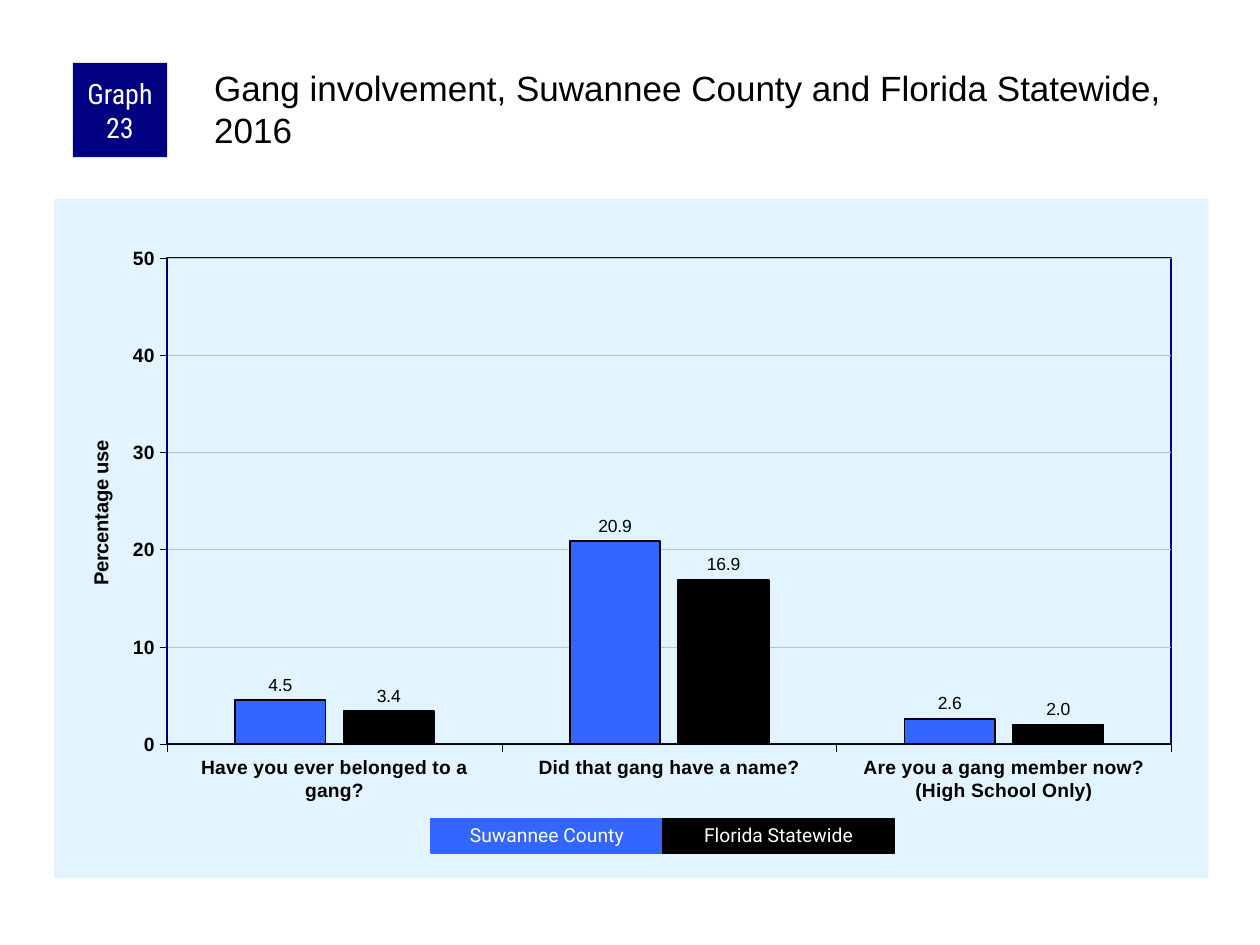
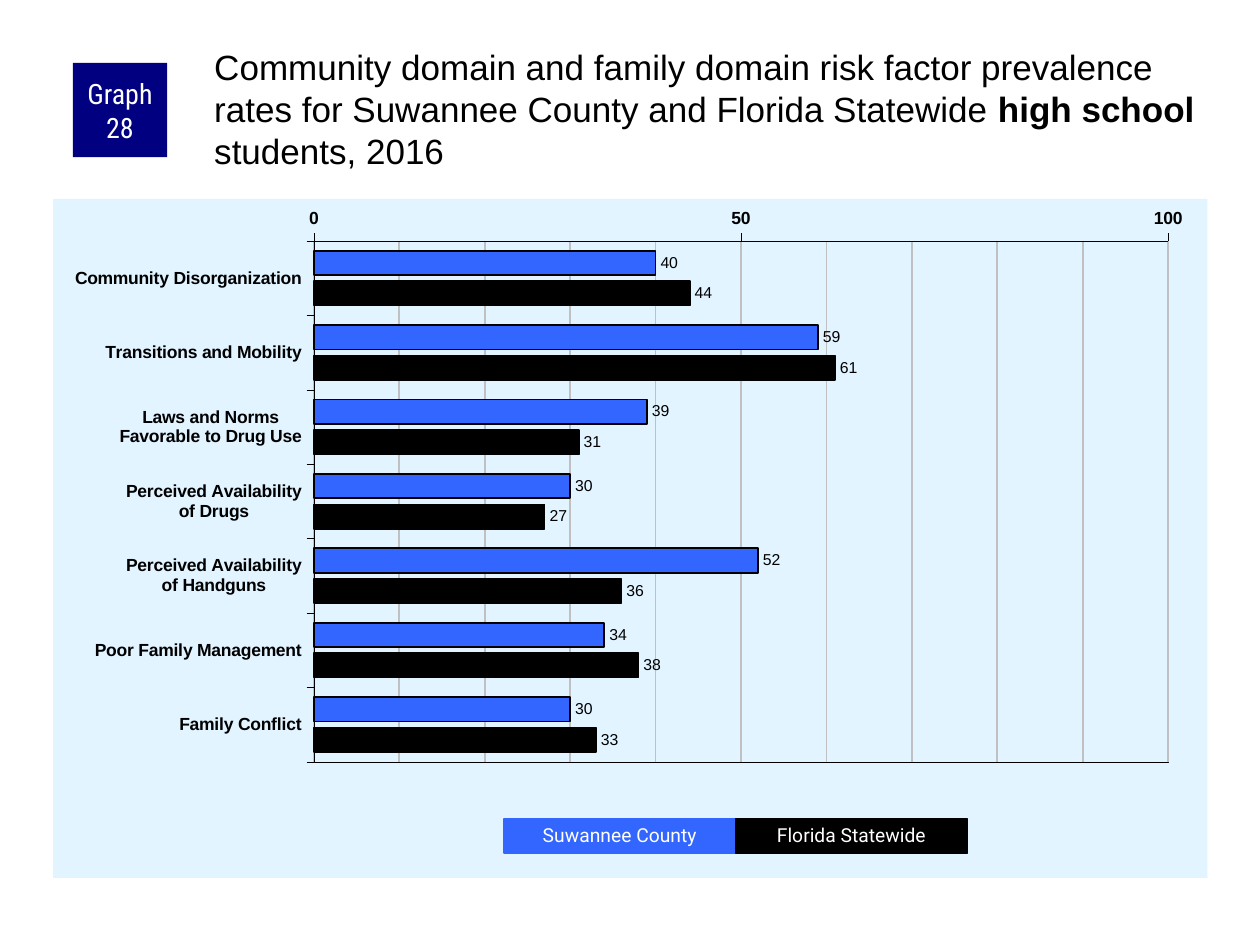
from copy import deepcopy

from lxml import etree
from pptx import Presentation
from pptx.chart.data import CategoryChartData
from pptx.dml.color import RGBColor
from pptx.enum.chart import (XL_AXIS_CROSSES, XL_CHART_TYPE, XL_LABEL_POSITION,
                             XL_TICK_MARK)
from pptx.enum.shapes import MSO_SHAPE
from pptx.enum.text import MSO_ANCHOR, PP_ALIGN
from pptx.oxml import parse_xml
from pptx.oxml.ns import nsdecls, qn
from pptx.util import Cm, Pt

COLUMN = XL_CHART_TYPE.COLUMN_CLUSTERED
BAR = XL_CHART_TYPE.BAR_CLUSTERED
OUTSIDE = XL_TICK_MARK.OUTSIDE
NO_TICK = XL_TICK_MARK.NONE
LABEL_END = XL_LABEL_POSITION.OUTSIDE_END
CROSS_MAXIMUM = XL_AXIS_CROSSES.MAXIMUM
RECTANGLE = MSO_SHAPE.RECTANGLE
MIDDLE = MSO_ANCHOR.MIDDLE
CENTER = PP_ALIGN.CENTER

BLACK, WHITE, NAVY, GREY, PANEL = "000000", "FFFFFF", "000080", "C0C0C0", "E1F4FF"
PLACES = [("Suwannee County", "3366FF"), ("Florida Statewide", BLACK)]

GRAPHS = [
    {
        "number": 23, "title_top": 1.27, "chart_left": 1.09, "legend_left": 8.69,
        "title": [("Gang involvement, Suwannee County and Florida Statewide, 2016", False)],
        "type": COLUMN, "gap": 150, "overlap": -20,
        "plot": (0.098, 0.087, 0.87, 0.716), "border": (NAVY, 12700),
        "categories": ["Have you ever belonged to a gang?", "Did that gang have a name?",
                       "Are you a gang member now?\n(High School Only)"],
        "values": [(4.5, 20.9, 2.6), (3.4, 16.9, 2.0)],
        "maximum": 50, "major": 10, "grid": 0.25, "format": "0.0",
        "size": 11.5, "axis_size": 11, "label_size": 10,
    },
    {
        "number": 28, "title_top": 0.84, "chart_left": 1.07, "legend_left": 10.16,
        "title": [("Community domain and family domain risk factor prevalence rates "
                   "for Suwannee County and Florida Statewide ", False),
                  ("high school", True), (" students, 2016", False)],
        "type": BAR, "gap": 80, "overlap": -25,
        "plot": (0.226, 0.062, 0.74, 0.767), "border": (BLACK, 3175),
        "categories": ["Community Disorganization", "Transitions and Mobility",
                       "Laws and Norms\nFavorable to Drug Use",
                       "Perceived Availability\nof Drugs",
                       "Perceived Availability\nof Handguns",
                       "Poor Family Management", "Family Conflict"],
        "values": [(40, 59, 39, 30, 52, 34, 30), (44, 61, 31, 27, 36, 38, 33)],
        "maximum": 100, "major": 50, "grid": 1, "format": "0",
        "size": 11.8, "axis_size": 10, "label_size": 9,
    },
]


def rgb(color):
    return RGBColor.from_string(color)


def manual_layout(**settings):
    """Return a chart layout element with the given settings, in order."""
    layout = parse_xml(f"<c:layout {nsdecls('c')}><c:manualLayout/></c:layout>")
    for name, value in settings.items():
        etree.SubElement(layout[0], qn(f"c:{name}")).set("val", str(value))
    return layout


presentation = Presentation()
presentation.slide_width, presentation.slide_height = Cm(25.4), Cm(19.05)

for graph in GRAPHS:
    slide = presentation.slides.add_slide(presentation.slide_layouts[6])

    # Chart and its data
    data = CategoryChartData()
    data.categories = graph["categories"]
    for (place, color), values in zip(PLACES, graph["values"]):
        data.add_series(place, values)
    chart = slide.shapes.add_chart(graph["type"], Cm(graph["chart_left"]), Cm(4.01),
                                   Cm(23.27), Cm(13.69), data).chart
    chart.has_title = chart.has_legend = False
    chart.font.name, chart.font.size = "Arial", Pt(graph["size"])
    chart.font.color.rgb = rgb(BLACK)

    # Bars and value labels
    plot = chart.plots[0]
    plot.vary_by_categories = False
    plot.gap_width, plot.overlap = graph["gap"], graph["overlap"]
    for series, (place, color) in zip(plot.series, PLACES):
        series.format.fill.solid()
        series.format.fill.fore_color.rgb = rgb(color)
        series.format.line.color.rgb = rgb(BLACK)
        series.format.line.width = Pt(1)
        labels = series.data_labels
        labels.show_value, labels.position = True, LABEL_END
        labels.number_format, labels.number_format_is_linked = graph["format"], False
        labels.font.name, labels.font.size = "Arial", Pt(graph["label_size"])
        labels.font.color.rgb = rgb(BLACK)

    # Axes and gridlines
    category_axis, value_axis = chart.category_axis, chart.value_axis
    for axis in (category_axis, value_axis):
        axis.major_tick_mark, axis.minor_tick_mark = OUTSIDE, NO_TICK
        axis.format.line.color.rgb = rgb(BLACK)
        axis.format.line.width = Pt(0.25)
        font = axis.tick_labels.font
        font.name, font.size, font.bold = "Arial", Pt(graph["axis_size"]), True
        font.color.rgb = rgb(BLACK)
    value_axis.minimum_scale, value_axis.maximum_scale = 0, graph["maximum"]
    value_axis.major_unit = graph["major"]
    value_axis.tick_labels.number_format = "0"
    value_axis.tick_labels.number_format_is_linked = False
    grid_line = value_axis.major_gridlines.format.line
    grid_line.color.rgb = rgb(GREY)
    grid_line.width = Pt(graph["grid"])
    if graph["type"] == BAR:
        category_axis.reverse_order = True
        category_axis.crosses = CROSS_MAXIMUM
        # Minor gridlines take the style of the major ones
        value_axis.minor_unit = 10
        value_axis.has_minor_gridlines = True
        axis_element = value_axis._element
        major_style = axis_element.find(qn("c:majorGridlines"))[0]
        axis_element.find(qn("c:minorGridlines")).append(deepcopy(major_style))
    else:
        axis_title = value_axis.axis_title
        paragraph = axis_title.text_frame.paragraphs[0]
        paragraph.text = "Percentage use"
        paragraph.font.name, paragraph.font.size = "Arial", Pt(graph["size"])
        paragraph.font.bold = True
        paragraph.font.color.rgb = rgb(BLACK)
        title_element = axis_title._element
        for layout in title_element.findall(qn("c:layout")):
            title_element.remove(layout)
        title_element.find(qn("c:tx")).addnext(
            manual_layout(xMode="edge", yMode="edge", x=0.026, y=0.35))

    # Plot position, plot border and chart background
    chart_element = chart._chartSpace.find(qn("c:chart"))
    plot_area = chart_element.find(qn("c:plotArea"))
    for layout in plot_area.findall(qn("c:layout")):
        plot_area.remove(layout)
    x, y, width, height = graph["plot"]
    plot_area.insert(0, manual_layout(layoutTarget="inner", xMode="edge", yMode="edge",
                                      x=x, y=y, w=width, h=height))
    border_color, border_width = graph["border"]
    plot_area.append(parse_xml(
        f"<c:spPr {nsdecls('c', 'a')}><a:noFill/><a:ln w='{border_width}'><a:solidFill>"
        f"<a:srgbClr val='{border_color}'/></a:solidFill></a:ln></c:spPr>"))
    chart_element.addnext(parse_xml(
        f"<c:spPr {nsdecls('c', 'a')}><a:solidFill><a:srgbClr val='{PANEL}'/>"
        "</a:solidFill><a:ln><a:noFill/></a:ln></c:spPr>"))

    # Title
    title_box = slide.shapes.add_textbox(Cm(4.24), Cm(graph["title_top"]),
                                         Cm(20.12), Cm(2.11))
    frame = title_box.text_frame
    frame.word_wrap = True
    frame.margin_left = frame.margin_top = Cm(0.08)
    frame.margin_right = frame.margin_bottom = 0
    paragraph = frame.paragraphs[0]
    for text, bold in graph["title"]:
        run = paragraph.add_run()
        run.text = text
        run.font.name, run.font.size, run.font.bold = "Arial", Pt(20), bold
        run.font.color.rgb = rgb(BLACK)

    # Number badge and legend boxes
    boxes = [(f"Graph {graph['number']}", NAVY, 1.47, 1.27, 1.9, 1.9,
              "Roboto Condensed", 16, 1.0, 0)]
    for index, (place, color) in enumerate(PLACES):
        boxes.append((place, color, graph["legend_left"] + index * 4.67, 16.51,
                      4.67, 0.69, "Roboto", 11, 0.9, 0.75))
    for text, color, left, top, width, height, font_name, size, spacing, line in boxes:
        shape = slide.shapes.add_shape(RECTANGLE, Cm(left), Cm(top), Cm(width), Cm(height))
        shape.shadow.inherit = False
        shape.fill.solid()
        shape.fill.fore_color.rgb = rgb(color)
        if line:
            shape.line.color.rgb = rgb(color)
            shape.line.width = Pt(line)
        else:
            shape.line.fill.background()
        frame = shape.text_frame
        frame.word_wrap, frame.vertical_anchor = True, MIDDLE
        frame.margin_left = frame.margin_right = Cm(0.13)
        frame.margin_top = frame.margin_bottom = 0
        paragraph = frame.paragraphs[0]
        paragraph.text = text
        paragraph.alignment, paragraph.line_spacing = CENTER, spacing
        paragraph.font.name, paragraph.font.size = font_name, Pt(size)
        paragraph.font.color.rgb = rgb(WHITE)

presentation.save("out.pptx")
